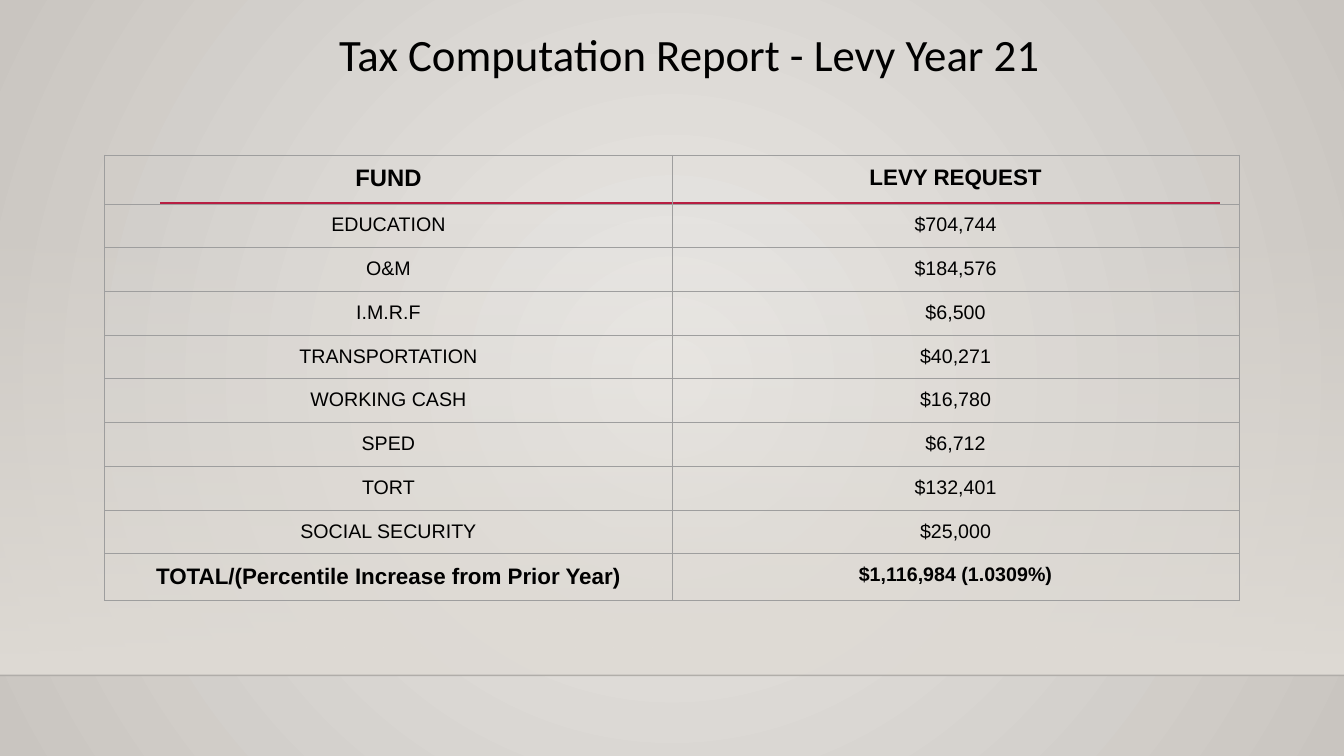
import dataclasses
from typing import Any

import pptx
import pptx.dml.color
import pptx.enum.shapes
import pptx.enum.text
import pptx.oxml
import pptx.oxml.ns
import pptx.util

Inches = pptx.util.Inches
qn = pptx.oxml.ns.qn
NS = pptx.oxml.ns.nsdecls("a")


@dataclasses.dataclass(frozen=True)
class Theme:
    title_font: str = "Calibri"
    table_font: str = "Arial"
    text: str = "000000"
    glow: str = "EBE9E6"
    edge: str = "C9C5C0"
    wall: str = "DFDBD5"
    floor_line: str = "000001"
    accent: str = "B71E42"
    border: str = "9E9E9E"
    title_size: int = 32
    head_size: int = 17
    label_size: int = 16
    body_size: int = 14
    border_width: float = 0.75


@dataclasses.dataclass(frozen=True)
class Rule:
    left: float
    right: float
    y: float
    color: str
    width: float
    opacity: int = 100


@dataclasses.dataclass(frozen=True)
class FundRow:
    fund: str
    levy: str
    fund_size: int = Theme.body_size
    levy_size: int = Theme.body_size
    bold: bool = False


THEME = Theme()
RULES = [
    Rule(0, 13.33, 6.7, THEME.floor_line, 1, opacity=20),
    Rule(1.59, 12.1, 2.02, THEME.accent, 2.5),
]
ROWS = [
    FundRow("FUND", "LEVY REQUEST", THEME.head_size, THEME.label_size, bold=True),
    FundRow("EDUCATION", "$704,744"),
    FundRow("O&M", "$184,576"),
    FundRow("I.M.R.F", "$6,500"),
    FundRow("TRANSPORTATION", "$40,271"),
    FundRow("WORKING CASH", "$16,780"),
    FundRow("SPED", "$6,712"),
    FundRow("TORT", "$132,401"),
    FundRow("SOCIAL SECURITY", "$25,000"),
    FundRow("TOTAL/(Percentile Increase from Prior Year)", "$1,116,984 (1.0309%)",
            THEME.label_size, bold=True),
]


def rgb(color: str) -> pptx.dml.color.RGBColor:
    return pptx.dml.color.RGBColor.from_string(color)


def write_text(tf: Any, text: str, *, font: str, size: int, bold: bool = False,
               spacing: float = 1.0) -> None:
    p = tf.paragraphs[0]
    p.alignment = pptx.enum.text.PP_ALIGN.CENTER
    p.line_spacing = spacing
    r = p.add_run()
    r.text = text
    r.font.name = font
    r.font.size = pptx.util.Pt(size)
    r.font.bold = bold
    r.font.color.rgb = rgb(THEME.text)


def set_gradient(root: Any, fill: Any, start: str, end: str, direction: str,
                 start_opacity: int = 100) -> None:
    """Fill with two stops; direction is the a:lin or a:path element."""
    fill.gradient()
    grad = root.find(".//" + qn("a:gradFill"))
    grad.clear()
    stops = (
        f'<a:gsLst {NS}><a:gs pos="0"><a:srgbClr val="{start}">'
        f'<a:alpha val="{start_opacity * 1000}"/></a:srgbClr></a:gs>'
        f'<a:gs pos="100000"><a:srgbClr val="{end}"/></a:gs></a:gsLst>'
    )
    for xml in (stops, direction):
        grad.append(pptx.oxml.parse_xml(xml))


def add_backdrop(s: Any) -> None:
    set_gradient(s._element, s.background.fill, THEME.glow, THEME.edge,
                 f'<a:path {NS} path="circle"><a:fillToRect l="50000" t="50000" '
                 'r="50000" b="50000"/></a:path>')
    sp = s.shapes.add_shape(pptx.enum.shapes.MSO_SHAPE.RECTANGLE, 0, Inches(2.21),
                            Inches(13.33), Inches(4.49))
    sp.shadow.inherit = False
    sp.line.fill.background()
    set_gradient(sp._element, sp.fill, THEME.wall, THEME.wall,
                 f'<a:lin {NS} ang="5400000" scaled="0"/>', start_opacity=0)


def add_rule(s: Any, rule: Rule) -> None:
    line = s.shapes.add_connector(pptx.enum.shapes.MSO_CONNECTOR.STRAIGHT,
                                  Inches(rule.left), Inches(rule.y),
                                  Inches(rule.right), Inches(rule.y))
    line.line.color.rgb = rgb(rule.color)
    line.line.width = pptx.util.Pt(rule.width)
    if rule.opacity < 100:
        color = line._element.spPr.find(".//" + qn("a:srgbClr"))
        color.append(pptx.oxml.parse_xml(f'<a:alpha {NS} val="{rule.opacity * 1000}"/>'))
    line._element.spPr.append(pptx.oxml.parse_xml(f"<a:effectLst {NS}/>"))


def add_title(s: Any, text: str) -> None:
    box = s.shapes.add_textbox(Inches(1.59), Inches(0.28), Inches(10.5), Inches(0.75))
    box.text_frame.word_wrap = True
    write_text(box.text_frame, text, font=THEME.title_font, size=THEME.title_size,
               spacing=0.9)


def format_cell(cell: Any) -> None:
    """Give the cell equal margins, thin borders and no fill."""
    cell.margin_left = cell.margin_right = Inches(0.1)
    cell.margin_top = cell.margin_bottom = Inches(0.1)
    tc_pr = cell._tc.get_or_add_tcPr()
    for side in "LRTB":
        tc_pr.append(pptx.oxml.parse_xml(
            f'<a:ln{side} {NS} w="{pptx.util.Pt(THEME.border_width)}"><a:solidFill>'
            f'<a:srgbClr val="{THEME.border}"/></a:solidFill></a:ln{side}>'))
    cell.fill.background()


def add_levy_table(s: Any, rows: list[FundRow]) -> None:
    table = s.shapes.add_table(len(rows), 2, Inches(1.04), Inches(1.54),
                               Inches(11.25), Inches(0.42 * len(rows))).table
    table.first_row = False
    table.horz_banding = False
    for i, row in enumerate(rows):
        table.rows[i].height = Inches(0.42)
        columns = ((row.fund, row.fund_size), (row.levy, row.levy_size))
        for j, (text, size) in enumerate(columns):
            cell = table.cell(i, j)
            format_cell(cell)
            write_text(cell.text_frame, text, font=THEME.table_font, size=size,
                       bold=row.bold)


def main() -> None:
    prs = pptx.Presentation()
    prs.slide_width, prs.slide_height = Inches(13.33), Inches(7.5)
    s = prs.slides.add_slide(prs.slide_layouts[6])
    add_backdrop(s)
    for rule in RULES:
        add_rule(s, rule)
    add_title(s, "Tax Computation Report - Levy Year 21")
    add_levy_table(s, ROWS)
    prs.save("out.pptx")


if __name__ == "__main__":
    main()
